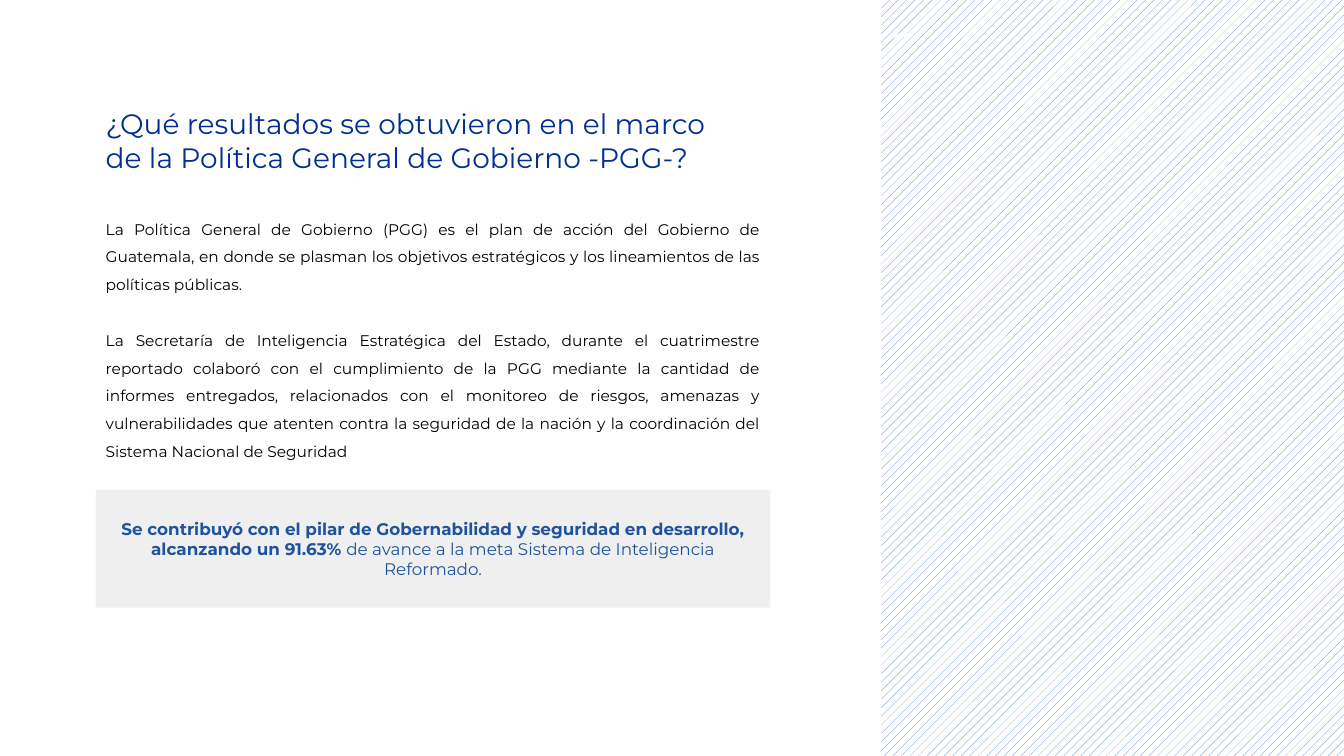
from pptx import Presentation
from pptx.dml.color import RGBColor
from pptx.enum.dml import MSO_PATTERN
from pptx.enum.shapes import MSO_SHAPE
from pptx.enum.text import MSO_ANCHOR, PP_ALIGN
from pptx.util import Inches, Pt

RECTANGLE = MSO_SHAPE.RECTANGLE
DOTTED = MSO_PATTERN.PERCENT_20
TOP, MIDDLE = MSO_ANCHOR.TOP, MSO_ANCHOR.MIDDLE
LEFT, CENTER, JUSTIFY = PP_ALIGN.LEFT, PP_ALIGN.CENTER, PP_ALIGN.JUSTIFY

NAVY = RGBColor(0x00, 0x2E, 0x91)
BLUE = RGBColor(0x20, 0x53, 0x9D)
PATTERN_BLUE = RGBColor(0x44, 0x72, 0xC4)
GRAY = RGBColor(0xEF, 0xEF, 0xEF)
BLACK = RGBColor(0x00, 0x00, 0x00)
WHITE = RGBColor(0xFF, 0xFF, 0xFF)

COLUMN_LEFT, COLUMN_WIDTH = 0.95, 6.69
PANEL_LEFT = 8.74
SLIDE_WIDTH, SLIDE_HEIGHT = 13.33, 7.5

TITLE = "¿Qué resultados se obtuvieron en el marco de la Política General de Gobierno -PGG-?"
BODY = [
    "La Política General de Gobierno (PGG) es el plan de acción del Gobierno de "
    "Guatemala, en donde se plasman los objetivos estratégicos y los lineamientos "
    "de las políticas públicas.",
    "La Secretaría de Inteligencia Estratégica del Estado, durante el cuatrimestre "
    "reportado colaboró con el cumplimiento de la PGG mediante la cantidad de "
    "informes entregados, relacionados con el monitoreo de riesgos, amenazas y "
    "vulnerabilidades que atenten contra la seguridad de la nación y la "
    "coordinación del Sistema Nacional de Seguridad",
]
RESULT_BOLD = (
    "Se contribuyó con el pilar de Gobernabilidad y seguridad en desarrollo, "
    "alcanzando un 91.63% "
)
RESULT_PLAIN = "de avance a la meta Sistema de Inteligencia Reformado."


def add_span(para, text, size, color, font="Montserrat", bold=False):
    span = para.add_run()
    span.text = text
    span.font.name = font
    span.font.size = Pt(size)
    span.font.bold = bold
    span.font.color.rgb = color


def add_text_frame(page, box):
    frame = page.shapes.add_textbox(*map(Inches, box)).text_frame
    frame.word_wrap = True
    return frame


def add_plain_rectangle(page, box, anchor):
    """Add a rectangle without line or shadow, its fill left to the caller."""
    shape = page.shapes.add_shape(RECTANGLE, *map(Inches, box))
    shape.shadow.inherit = False
    shape.line.fill.background()
    shape.text_frame.word_wrap = True
    shape.text_frame.vertical_anchor = anchor
    return shape


def add_title(page, box):
    add_span(add_text_frame(page, box).paragraphs[0], TITLE, 20, NAVY)


def add_body(page, box):
    frame = add_text_frame(page, box)
    for index, text in enumerate(BODY):
        para = frame.add_paragraph() if index else frame.paragraphs[0]
        para.alignment = JUSTIFY
        para.line_spacing = 1.5
        para.space_before = Pt(20 if index else 0)
        add_span(para, text, 11, BLACK)


def add_pattern_panel(page, box):
    panel = add_plain_rectangle(page, box, TOP)
    panel.fill.patterned()
    panel.fill.pattern = DOTTED
    panel.fill.fore_color.rgb = PATTERN_BLUE
    panel.fill.back_color.rgb = WHITE
    para = panel.text_frame.paragraphs[0]
    para.alignment = LEFT
    para.line_spacing = 0.9
    para.space_before = Pt(10)
    add_span(para, "..", 28, WHITE, font="Calibri")


def add_result(page, box):
    banner = add_plain_rectangle(page, box, MIDDLE)
    banner.fill.solid()
    banner.fill.fore_color.rgb = GRAY
    para = banner.text_frame.paragraphs[0]
    para.alignment = CENTER
    add_span(para, RESULT_BOLD, 12, BLUE, bold=True)
    add_span(para, RESULT_PLAIN, 12, BLUE)


def main():
    deck = Presentation()
    deck.slide_width = Inches(SLIDE_WIDTH)
    deck.slide_height = Inches(SLIDE_HEIGHT)
    page = deck.slides.add_slide(deck.slide_layouts[6])
    add_title(page, (COLUMN_LEFT, 1.01, 6.45, 0.77))
    add_body(page, (COLUMN_LEFT, 2.04, COLUMN_WIDTH, 2.57))
    add_pattern_panel(page, (PANEL_LEFT, 0, SLIDE_WIDTH - PANEL_LEFT, SLIDE_HEIGHT))
    add_result(page, (COLUMN_LEFT, 4.86, COLUMN_WIDTH, 1.17))
    deck.save("out.pptx")


if __name__ == "__main__":
    main()
